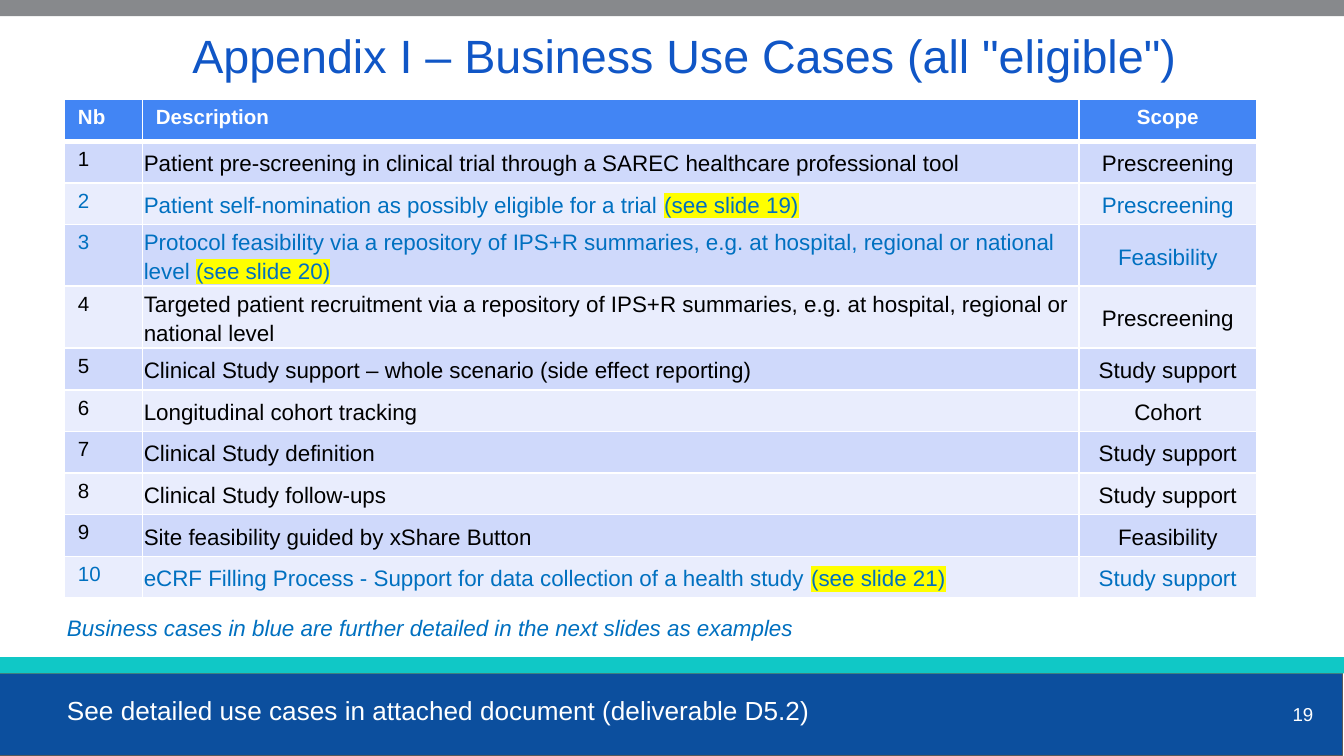
from lxml import etree
from pptx import Presentation
from pptx.dml.color import RGBColor
from pptx.enum.shapes import MSO_SHAPE
from pptx.enum.text import MSO_ANCHOR, MSO_AUTO_SIZE, PP_ALIGN
from pptx.oxml import parse_xml
from pptx.oxml.ns import qn
from pptx.util import Inches, Pt

RECTANGLE = MSO_SHAPE.RECTANGLE
TOP, MIDDLE = MSO_ANCHOR.TOP, MSO_ANCHOR.MIDDLE
LEFT, CENTER, RIGHT = PP_ALIGN.LEFT, PP_ALIGN.CENTER, PP_ALIGN.RIGHT
FIT_SHAPE, NO_FIT = MSO_AUTO_SIZE.SHAPE_TO_FIT_TEXT, MSO_AUTO_SIZE.NONE
NAMESPACE = "http://schemas.openxmlformats.org/drawingml/2006/main"
BLUE, BLACK, WHITE, YELLOW = "0070C0", "000000", "FFFFFF", "FFFF00"


def color(value):
    return RGBColor.from_string(value)


def write_text(paragraph, text, size=12, fill=BLACK, bold=False, italic=False,
               align=LEFT, highlight=None):
    paragraph.alignment = align
    run = paragraph.add_run()
    run.text = text
    font = run.font
    font.name = "Arial"
    font.size = Pt(size)
    font.bold = bold
    font.italic = italic
    font.color.rgb = color(fill)
    if highlight:
        mark = etree.Element(qn("a:highlight"))
        etree.SubElement(mark, qn("a:srgbClr"), val=highlight)
        run._r.rPr.find(qn("a:solidFill")).addnext(mark)


presentation = Presentation()
presentation.slide_width = Inches(10)
presentation.slide_height = Inches(10) * 9 // 16
slide = presentation.slides.add_slide(presentation.slide_layouts[6])

bands = [
    (0, -0.01, 0.13, "87898C", None),
    (-0.01, 5.01, 0.61, "0C4F9E", "595959"),
    (0, 4.89, 0.12, "10C8C6", None),
]
for left, top, height, fill, outline in bands:
    band = slide.shapes.add_shape(RECTANGLE, Inches(left), Inches(top), Inches(10), Inches(height))
    band.shadow.inherit = False
    band.fill.solid()
    band.fill.fore_color.rgb = color(fill)
    if outline:
        band.line.color.rgb = color(outline)
        band.line.width = Pt(0.75)
    else:
        band.line.fill.background()

text_boxes = [
    (1.04, 0.07, 8.1, 0.67, MIDDLE, True, NO_FIT,
     'Appendix I – Business Use Cases (all "eligible")',
     {"size": 25, "fill": "1056C6", "align": CENTER}),
    (0.4, 4.52, 6.08, 0.3, TOP, True, FIT_SHAPE,
     "Business cases in blue are further detailed in the next slides as examples",
     {"fill": BLUE, "italic": True}),
    (0.4, 5.12, 5.75, 0.34, TOP, False, FIT_SHAPE,
     "See detailed use cases in attached document (deliverable D5.2)",
     {"size": 14, "fill": WHITE}),
    (9.27, 5.1, 0.6, 0.43, MIDDLE, True, NO_FIT, "19",
     {"size": 10, "fill": WHITE, "align": RIGHT}),
]
for left, top, width, height, anchor, wrap, fit, text, text_format in text_boxes:
    box = slide.shapes.add_textbox(Inches(left), Inches(top), Inches(width), Inches(height))
    frame = box.text_frame
    frame.word_wrap = wrap
    frame.auto_size = fit
    frame.vertical_anchor = anchor
    write_text(frame.paragraphs[0], text, **text_format)

use_cases = [
    ("Patient pre-screening in clinical trial through a SAREC healthcare professional tool",
     "", "Prescreening"),
    ("Patient self-nomination as possibly eligible for a trial ", "(see slide 19)", "Prescreening"),
    ("Protocol feasibility via a repository of IPS+R summaries, e.g. at hospital, "
     "regional or national level ", "(see slide 20)", "Feasibility"),
    ("Targeted patient recruitment via a repository of IPS+R summaries, e.g. at hospital, "
     "regional or national level", "", "Prescreening"),
    ("Clinical Study support – whole scenario (side effect reporting)", "", "Study support"),
    ("Longitudinal cohort tracking", "", "Cohort"),
    ("Clinical Study definition", "", "Study support"),
    ("Clinical Study follow-ups", "", "Study support"),
    ("Site feasibility guided by xShare Button", "", "Feasibility"),
    ("eCRF Filling Process - Support for data collection of a health study ",
     "(see slide 21)", "Study support"),
]
table = slide.shapes.add_table(len(use_cases) + 1, 3, Inches(0.48), Inches(0.74),
                               Inches(8.87), Inches(3.71)).table
for column, width in zip(table.columns, (0.58, 6.97, 1.32)):
    column.width = Inches(width)
for number, row in enumerate(table.rows):
    row.height = Inches(0.44 if number in (3, 4) else 0.31)
    for cell in row.cells:
        for side in ("L", "R", "T", "B"):
            thick = (number, side) in ((0, "B"), (1, "T"))
            cell._tc.get_or_add_tcPr().append(parse_xml(
                f'<a:ln{side} xmlns:a="{NAMESPACE}" w="{Pt(3 if thick else 1)}">'
                f'<a:solidFill><a:srgbClr val="{WHITE}"/></a:solidFill></a:ln{side}>'))
        cell.fill.solid()
        cell.fill.fore_color.rgb = color(
            "4285F4" if number == 0 else "CFD9FB" if number % 2 else "E9EDFD")

for column, heading in enumerate(("Nb", "Description", "Scope")):
    write_text(table.cell(0, column).text_frame.paragraphs[0], heading, size=11,
               fill=WHITE, bold=True, align=CENTER if column == 2 else LEFT)

for number, (description, reference, scope) in enumerate(use_cases, 1):
    number_cell, description_cell, scope_cell = table.rows[number].cells
    text_color = BLUE if reference else BLACK
    write_text(number_cell.text_frame.paragraphs[0], str(number), size=11, fill=text_color)
    for cell in (description_cell, scope_cell):
        cell.vertical_anchor = MIDDLE
        cell.margin_left = cell.margin_right = Inches(0.01)
        cell.margin_top = cell.margin_bottom = Inches(0)
        paragraph = cell.text_frame.paragraphs[0]
        paragraph.line_spacing = 1.15
        paragraph.space_after = Pt(12)
    paragraph = description_cell.text_frame.paragraphs[0]
    write_text(paragraph, description, fill=text_color)
    if reference:
        write_text(paragraph, reference, fill=text_color, highlight=YELLOW)
    write_text(scope_cell.text_frame.paragraphs[0], scope, fill=text_color, align=CENTER)

presentation.save("out.pptx")
